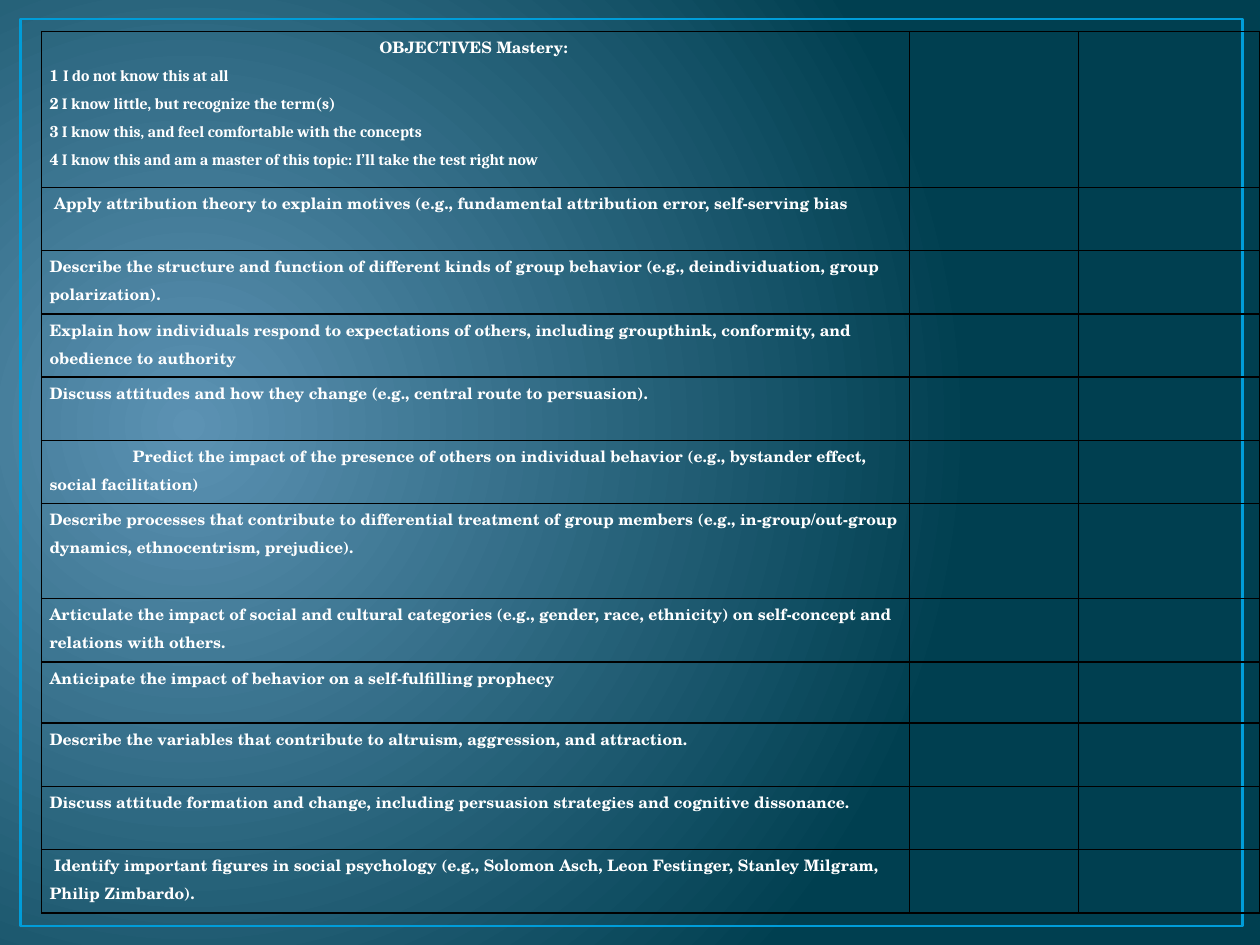
from lxml import etree
from pptx import Presentation
from pptx.dml.color import RGBColor
from pptx.enum.shapes import MSO_SHAPE
from pptx.enum.text import PP_ALIGN
from pptx.oxml.ns import qn
from pptx.util import Pt

RECTANGLE = MSO_SHAPE.RECTANGLE
CENTER = PP_ALIGN.CENTER
SERIF, SCHOLA = "Cambria", "TeX Gyre Schola"
WHITE, BLACK, BLUE = "FFFFFF", "000000", "009DD9"
GRADIENT = ("5C92B3", "003F50")
COLUMN_WIDTHS = (496, 96.5, 103.7)
HEADER_HEIGHT, ROW_HEIGHT = 89.1, 36.15
SPECIAL_HEIGHTS = {6: 54.3, 8: 35}
TAB_STOP = 47.5

TITLE = "OBJECTIVES Mastery: "
MASTERY_LEVELS = (
    ("1 ", "I do not know this at all"),
    ("2", " I know little, but recognize the term(s)"),
    ("3", " I know this, and feel comfortable with the concepts"),
    ("4", " I know this and am a master of this topic: I’ll take the test right now"),
)
OBJECTIVES = (
    " Apply attribution theory to explain motives (e.g., fundamental attribution error, self-serving bias",
    "Describe the structure and function of different kinds of group behavior (e.g., deindividuation, group polarization).",
    "Explain how individuals respond to expectations of others, including groupthink, conformity, and obedience to authority",
    "Discuss attitudes and how they change (e.g., central route to persuasion).",
    "\tPredict the impact of the presence of others on individual behavior (e.g., bystander effect, social facilitation)",
    "Describe processes that contribute to differential treatment of group members (e.g., in-group/out-group dynamics, ethnocentrism, prejudice).",
    "Articulate the impact of social and cultural categories (e.g., gender, race, ethnicity) on self-concept and relations with others.",
    "Anticipate the impact of behavior on a self-fulfilling prophecy",
    "Describe the variables that contribute to altruism, aggression, and attraction.",
    "Discuss attitude formation and change, including persuasion strategies and cognitive dissonance.",
    " Identify important figures in social psychology (e.g., Solomon Asch, Leon Festinger, Stanley Milgram, Philip Zimbardo).",
)


def color(value):
    """Turn a hex string into a colour."""
    return RGBColor.from_string(value)


def paint_background(slide):
    """Fill the slide with a circular gradient centred at the left."""
    fill = slide.background.fill
    fill.gradient()
    for stop, value in zip(fill.gradient_stops, GRADIENT):
        stop.color.rgb = color(value)
    gradient = slide.element.find(".//" + qn("a:gradFill"))
    gradient.remove(gradient.find(qn("a:lin")))
    circle = etree.SubElement(gradient, qn("a:path"), {"path": "circle"})
    edges = {"l": "15000", "t": "50000", "r": "85000", "b": "60000"}
    etree.SubElement(circle, qn("a:fillToRect"), edges)


def add_frame(slide, left, top, width, height):
    """Draw the thin outline around the slide."""
    frame = slide.shapes.add_shape(RECTANGLE, Pt(left), Pt(top), Pt(width), Pt(height))
    frame.shadow.inherit = False
    frame.fill.background()
    frame.line.color.rgb = color(BLUE)
    frame.line.width = Pt(1.5)


def style_cell(cell):
    """Clear the fill, set the margins and draw black borders."""
    cell.fill.background()
    cell.margin_left = cell.margin_right = Pt(4.5)
    cell.margin_top = cell.margin_bottom = 0
    properties = cell._tc.get_or_add_tcPr()
    for index, side in enumerate(("lnL", "lnR", "lnT", "lnB")):
        border = etree.Element(qn("a:" + side), {"w": str(Pt(1))})
        solid = etree.SubElement(border, qn("a:solidFill"))
        etree.SubElement(solid, qn("a:srgbClr"), {"val": BLACK})
        properties.insert(index, border)


def write_paragraph(paragraph, *parts):
    """Write (text, font) parts as bold white runs."""
    paragraph.line_spacing = 1.15
    for text, font_name in parts:
        run = paragraph.add_run()
        run.text = text
        run.font.name = font_name
        run.font.size = Pt(9)
        run.font.bold = True
        run.font.color.rgb = color(WHITE)


def add_tab_stop(paragraph, position):
    """Give the paragraph one left tab stop."""
    tabs = etree.SubElement(paragraph._p.get_or_add_pPr(), qn("a:tabLst"))
    etree.SubElement(tabs, qn("a:tab"), {"pos": str(Pt(position)), "algn": "l"})


def fill_header(text_frame):
    """Write the title and the mastery scale."""
    title = text_frame.paragraphs[0]
    write_paragraph(title, (TITLE, SCHOLA))
    title.alignment = CENTER
    for number, meaning in MASTERY_LEVELS:
        write_paragraph(text_frame.add_paragraph(), (number, SCHOLA), (meaning, SERIF))


def add_objectives_table(slide, left, top):
    """Build the table with the scale on top and one objective a row."""
    heights = [HEADER_HEIGHT] + [
        SPECIAL_HEIGHTS.get(index, ROW_HEIGHT) for index in range(1, len(OBJECTIVES) + 1)
    ]
    table = slide.shapes.add_table(
        len(heights), len(COLUMN_WIDTHS), Pt(left), Pt(top), Pt(sum(COLUMN_WIDTHS)), Pt(sum(heights))
    ).table
    table.first_row = table.horz_banding = False
    for column, width in zip(table.columns, COLUMN_WIDTHS):
        column.width = Pt(width)
    for row, height in zip(table.rows, heights):
        row.height = Pt(height)
    for cell in table.iter_cells():
        style_cell(cell)
    fill_header(table.cell(0, 0).text_frame)
    for index, objective in enumerate(OBJECTIVES, start=1):
        paragraph = table.cell(index, 0).text_frame.paragraphs[0]
        write_paragraph(paragraph, (objective, SCHOLA))
        if objective.startswith("\t"):
            add_tab_stop(paragraph, TAB_STOP)


def main():
    """Create and save the presentation."""
    presentation = Presentation()
    presentation.slide_width, presentation.slide_height = Pt(720), Pt(540)
    slide = presentation.slides.add_slide(presentation.slide_layouts[6])
    paint_background(slide)
    add_frame(slide, 11.6, 10.8, 698.4, 518.4)
    add_objectives_table(slide, 23.8, 18)
    presentation.save("out.pptx")


if __name__ == "__main__":
    main()
